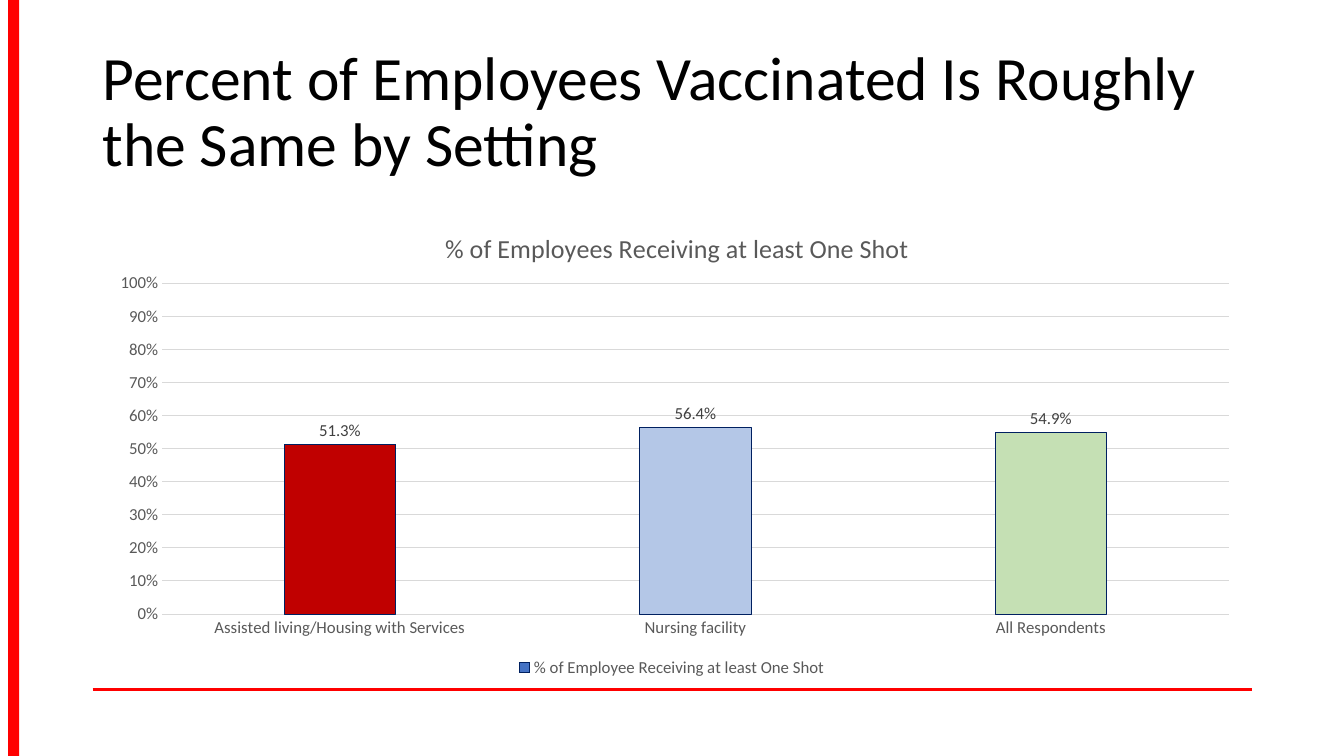
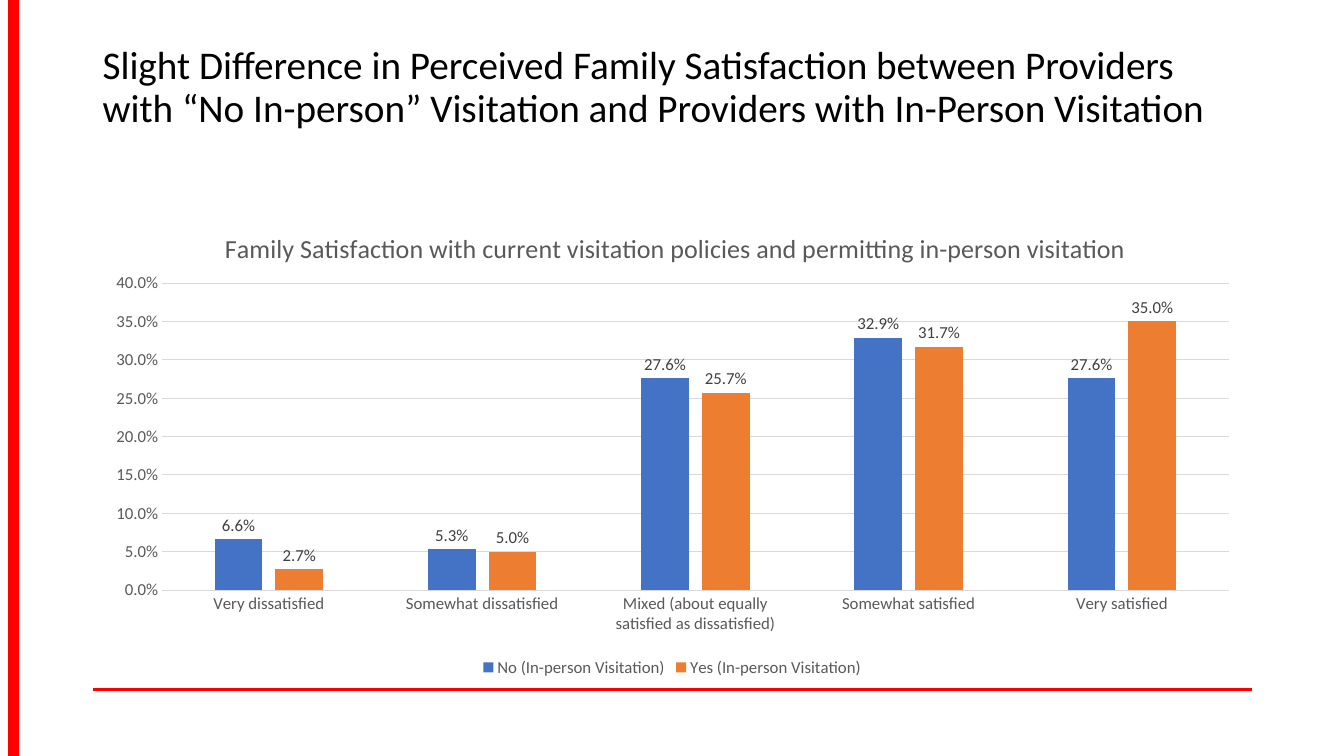
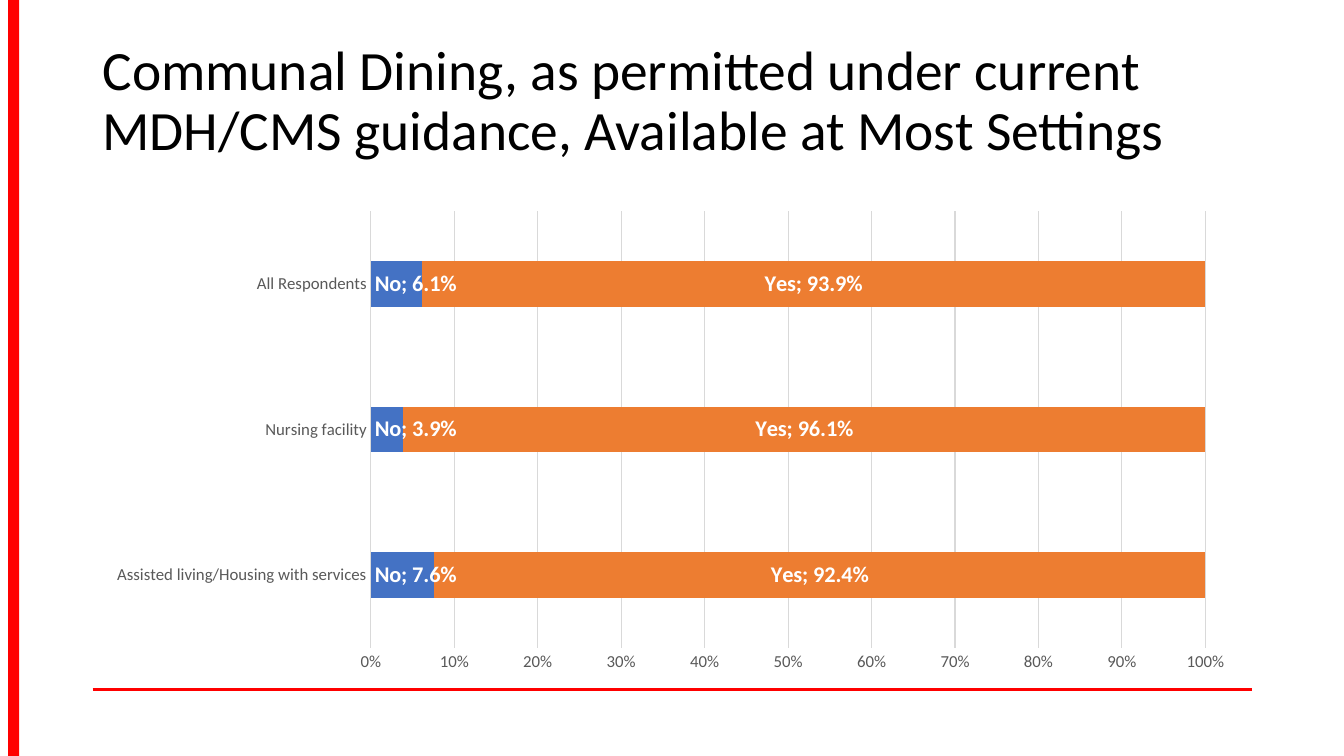
import pptx
import pptx.chart.data
import pptx.dml.color
import pptx.enum.chart
import pptx.enum.shapes
import pptx.enum.text
import pptx.oxml.ns
import pptx.oxml.xmlchemy
import pptx.util

Pt = pptx.util.Pt
qn = pptx.oxml.ns.qn
new_element = pptx.oxml.xmlchemy.OxmlElement
TYPE = pptx.enum.chart.XL_CHART_TYPE
LABEL = pptx.enum.chart.XL_LABEL_POSITION

FONT = "Calibri"
COLORS = {
    "red": "FF0000", "black": "000000", "white": "FFFFFF",
    "text": "595959", "label": "404040", "grid": "D9D9D9",
    "blue": "4472C4", "orange": "ED7D31", "navy": "002060",
    "dark_red": "C00000", "pale_blue": "B4C7E7", "pale_green": "C5E0B4",
}
LEFT, WIDTH = 66.2, 828
TITLE_HEIGHT = 104.4
CHART_TOP, CHART_HEIGHT = 144, 342.7
RULE_TOP = 492.5

COLUMN_LABELS = {"size": 12, "color": "label", "position": LABEL.OUTSIDE_END}
BAR_LABELS = {"size": 16, "color": "white", "bold": True, "named": True}


def rgb(name):
    return pptx.dml.color.RGBColor.from_string(COLORS[name])


def set_font(font, size, color, **flags):
    font.color.rgb = rgb(color)
    for key, value in {"name": FONT, "size": Pt(size), **flags}.items():
        setattr(font, key, value)


def set_fill(fill, color):
    fill.solid()
    fill.fore_color.rgb = rgb(color)


def set_line(line, color, width=0.75):
    line.color.rgb = rgb(color)
    line.width = Pt(width)


def add_frame(s):
    """Draw the red rule and side band that every slide has."""
    rule = s.shapes.add_connector(
        pptx.enum.shapes.MSO_CONNECTOR.STRAIGHT,
        Pt(LEFT), Pt(RULE_TOP), Pt(LEFT + WIDTH), Pt(RULE_TOP))
    set_line(rule.line, "red", 2)
    rule._element.spPr.append(new_element("a:effectLst"))
    band = s.shapes.add_shape(pptx.enum.shapes.MSO_SHAPE.RECTANGLE,
                              Pt(5.8), 0, Pt(8), Pt(540))
    band.shadow.inherit = False
    set_fill(band.fill, "red")
    band.line.fill.background()


def add_title(s, text, top, size):
    box = s.shapes.add_textbox(Pt(LEFT), Pt(top), Pt(WIDTH), Pt(TITLE_HEIGHT))
    tf = box.text_frame
    tf.word_wrap = True
    tf.vertical_anchor = pptx.enum.text.MSO_ANCHOR.MIDDLE
    p = tf.paragraphs[0]
    p.line_spacing = 0.9
    r = p.add_run()
    r.text = text
    set_font(r.font, size, "black")


def place(element, index, target=None, **fractions):
    """Give a chart part a fixed place, in fractions of the chart."""
    layout = element.find(qn("c:layout"))
    if layout is None:
        layout = new_element("c:layout")
        element.insert(index, layout)
    manual = new_element("c:manualLayout")
    layout.append(manual)
    values = {"layoutTarget": target} if target else {}
    values.update(xMode="edge", yMode="edge", **fractions)
    for tag, value in values.items():
        child = new_element(f"c:{tag}")
        child.set("val", str(value))
        manual.append(child)


def add_chart(s, kind, cats, series, plot_area, top_value, step, axis_format,
              overlap=0):
    data = pptx.chart.data.CategoryChartData(number_format="0.0%")
    data.categories = cats
    for name, values in series:
        data.add_series(name, values)
    chart = s.shapes.add_chart(kind, Pt(LEFT), Pt(CHART_TOP), Pt(WIDTH),
                               Pt(CHART_HEIGHT), data).chart
    set_font(chart.font, 12, "text")
    chart.has_title = False
    chart.has_legend = False
    plot = chart.plots[0]
    for key, value in {"gap_width": 219, "overlap": overlap,
                       "vary_by_categories": False}.items():
        setattr(plot, key, value)
    x, y, w, h = plot_area
    place(chart._chartSpace.chart.plotArea, 0, "inner", x=x, y=y, w=w, h=h)
    style_axes(chart, top_value, step, axis_format)
    return chart


def style_axes(chart, top_value, step, axis_format):
    cat_axis, val_axis = chart.category_axis, chart.value_axis
    for axis in (cat_axis, val_axis):
        axis.major_tick_mark = pptx.enum.chart.XL_TICK_MARK.NONE
        axis.minor_tick_mark = pptx.enum.chart.XL_TICK_MARK.NONE
        set_font(axis.tick_labels.font, 12, "text")
    cat_axis.has_major_gridlines = False
    set_line(cat_axis.format.line, "grid")
    for key, value in {"minimum_scale": 0, "maximum_scale": top_value,
                       "major_unit": step, "has_major_gridlines": True}.items():
        setattr(val_axis, key, value)
    set_line(val_axis.major_gridlines.format.line, "grid")
    val_axis.format.line.fill.background()
    val_axis.tick_labels.number_format = axis_format
    val_axis.tick_labels.number_format_is_linked = False


def add_heading(chart, text, x):
    """Put a title above the plot and a legend below it."""
    chart.has_title = True
    p = chart.chart_title.text_frame.paragraphs[0]
    r = p.add_run()
    r.text = text
    set_font(r.font, 18.6, "text", bold=False)
    place(chart.chart_title._element, 1, x=x, y=0.05)
    chart.has_legend = True
    chart.legend.position = pptx.enum.chart.XL_LEGEND_POSITION.BOTTOM
    chart.legend.include_in_layout = False
    set_font(chart.legend.font, 12, "text")


def style_series(series, fill, size, color, bold=False, position=None,
                 named=False):
    set_fill(series.format.fill, fill)
    series.invert_if_negative = False
    labels = series.data_labels
    set_font(labels.font, size, color, bold=bold)
    for key, value in {"number_format": "0.0%", "show_value": True,
                       "number_format_is_linked": False,
                       "show_series_name": named}.items():
        setattr(labels, key, value)
    if position is not None:
        labels.position = position
    if named:
        separator = new_element("c:separator")
        separator.text = "; "
        labels._element.find(qn("c:showBubbleSize")).addnext(separator)


def outline_columns(series, colors):
    set_line(series.format.line, "navy")
    for i, color in enumerate(colors):
        point = series.points[i].format
        set_fill(point.fill, color)
        set_line(point.line, "navy")


def add_vaccination(s):
    add_title(s, "Percent of Employees Vaccinated Is Roughly the Same by Setting",
              28.8, 44)
    chart = add_chart(
        s, TYPE.COLUMN_CLUSTERED,
        ["Assisted living/Housing with Services", "Nursing facility",
         "All Respondents"],
        [("% of Employee Receiving at least One Shot", [0.513, 0.564, 0.549])],
        (0.06, 0.17, 0.92, 0.69), 1, 0.1, "0%")
    add_heading(chart, "% of Employees Receiving at least One Shot", 0.3)
    series = chart.plots[0].series[0]
    style_series(series, "blue", **COLUMN_LABELS)
    outline_columns(series, ["dark_red", "pale_blue", "pale_green"])


def add_satisfaction(s):
    add_title(s, "Slight Difference in Perceived Family Satisfaction between "
              "Providers with “No In-person” Visitation and Providers with "
              "In-Person Visitation", 10.8, 28)
    chart = add_chart(
        s, TYPE.COLUMN_CLUSTERED,
        ["Very dissatisfied", "Somewhat dissatisfied",
         "Mixed (about equally satisfied as dissatisfied)",
         "Somewhat satisfied", "Very satisfied"],
        [("No (In-person Visitation)", [0.066, 0.053, 0.276, 0.329, 0.276]),
         ("Yes (In-person Visitation)", [0.027, 0.05, 0.257, 0.317, 0.35])],
        (0.06, 0.17, 0.92, 0.64), 0.4, 0.05, "0.0%", overlap=-27)
    add_heading(chart, "Family Satisfaction with current visitation policies "
                "and permitting in-person visitation", 0.11)
    for series, fill in zip(chart.plots[0].series, ["blue", "orange"]):
        style_series(series, fill, **COLUMN_LABELS)


def add_dining(s):
    add_title(s, "Communal Dining, as permitted under current MDH/CMS guidance, "
              "Available at Most Settings", 20.9, 39.6)
    chart = add_chart(
        s, TYPE.BAR_STACKED_100,
        ["Assisted living/Housing with services", "Nursing facility",
         "All Respondents"],
        [("No", [0.076, 0.039, 0.061]), ("Yes", [0.924, 0.961, 0.939])],
        (0.24, 0.02, 0.72, 0.91), 1, 0.1, "0%", overlap=100)
    no, yes = chart.plots[0].series
    style_series(no, "blue", position=LABEL.INSIDE_BASE, **BAR_LABELS)
    style_series(yes, "orange", position=LABEL.CENTER, **BAR_LABELS)


def main():
    prs = pptx.Presentation()
    prs.slide_width, prs.slide_height = Pt(960), Pt(540)
    for add_content in (add_vaccination, add_satisfaction, add_dining):
        s = prs.slides.add_slide(prs.slide_layouts[6])
        add_frame(s)
        add_content(s)
    prs.save("out.pptx")


if __name__ == "__main__":
    main()
